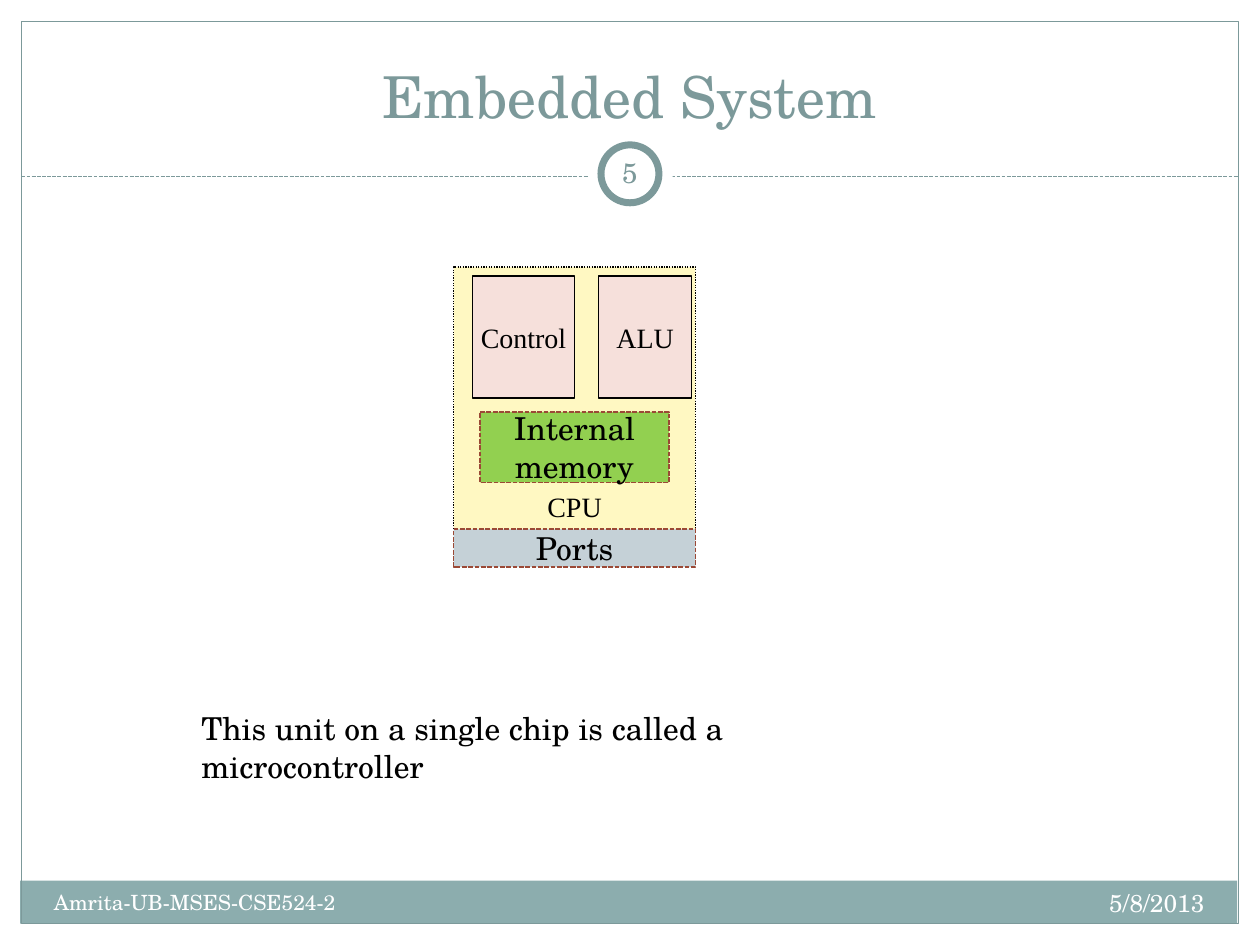
from pptx import Presentation
from pptx.dml.color import RGBColor
from pptx.enum.dml import MSO_LINE
from pptx.enum.shapes import MSO_CONNECTOR, MSO_SHAPE
from pptx.enum.text import MSO_ANCHOR, PP_ALIGN
from pptx.oxml.ns import qn
from pptx.util import Inches, Pt
from lxml import etree

RECT, OVAL = MSO_SHAPE.RECTANGLE, MSO_SHAPE.OVAL
DOT, DASH = MSO_LINE.ROUND_DOT, MSO_LINE.SQUARE_DOT
LEFT, CENTER, RIGHT = PP_ALIGN.LEFT, PP_ALIGN.CENTER, PP_ALIGN.RIGHT
TOP, MIDDLE, BOTTOM = MSO_ANCHOR.TOP, MSO_ANCHOR.MIDDLE, MSO_ANCHOR.BOTTOM
SERIF, TIMES = "TeX Gyre Schola", "Times New Roman"
TEAL, BAND, WHITE, BLACK, RUST = "7C999A", "8CADAE", "FFFFFF", "000000", "9B4936"


def rgb(value):
    return RGBColor.from_string(value)


def write(holder, text, size, font=SERIF, color=BLACK, align=CENTER,
          anchor=MIDDLE, wrap=True, inset=None):
    frame = holder.text_frame
    frame.text = text
    settings = {"word_wrap": wrap, "vertical_anchor": anchor}
    if inset is not None:
        for side in ("left", "top", "right", "bottom"):
            settings[f"margin_{side}"] = Inches(inset)
    for name, value in settings.items():
        setattr(frame, name, value)
    paragraph = frame.paragraphs[0]
    paragraph.alignment = align
    for name, value in {"size": Pt(size), "name": font, "bold": False}.items():
        setattr(paragraph.runs[0].font, name, value)
    paragraph.runs[0].font.color.rgb = rgb(color)


prs = Presentation()
prs.slide_width, prs.slide_height = Inches(10), Inches(7.5)
slide = prs.slides.add_slide(prs.slide_layouts[5])
shapes = slide.shapes

# Title
title = shapes.title
for name, value in {"left": 0.33, "top": 0.25, "width": 9.33, "height": 0.83}.items():
    setattr(title, name, Inches(value))
write(title, "Embedded System", 33, color=TEAL, anchor=BOTTOM)

# Dashed rule under the title
rule = shapes.add_connector(MSO_CONNECTOR.STRAIGHT, Inches(0.17), Inches(1.4),
                            Inches(9.83), Inches(1.4))
rule.line.color.rgb = rgb(TEAL)
rule.line.width = Pt(0.75)
rule.line.dash_style = DASH
etree.SubElement(rule._element.spPr, qn("a:effectLst"))

# Footer band, frame, number badge and chip blocks:
# preset, box, fill, line (colour, width, dash), label
blocks = [
    (RECT, (0.16, 6.99, 9.66, 0.34), BAND, None, None),
    (RECT, (0.17, 0.17, 9.66, 7.16), None, (TEAL, 0.75, None), None),
    (OVAL, (4.67, 1.05, 0.67, 0.67), WHITE, None, None),
    (OVAL, (4.77, 1.15, 0.46, 0.46), WHITE, (TEAL, 4, None), None),
    (RECT, (3.6, 2.12, 1.92, 2.08), "FFF8C2", (BLACK, 0.75, DOT),
     {"text": "CPU", "size": 16, "font": TIMES, "anchor": BOTTOM, "wrap": False}),
    (RECT, (3.75, 2.19, 0.81, 0.97), "F6E0DB", (BLACK, 0.75, None),
     {"text": "Control", "size": 16, "font": TIMES, "wrap": False}),
    (RECT, (4.75, 2.19, 0.74, 0.97), "F6E0DB", (BLACK, 0.75, None),
     {"text": "ALU", "size": 16, "font": TIMES, "wrap": False}),
    (RECT, (3.81, 3.27, 1.5, 0.56), "92D050", (RUST, 0.9, DASH),
     {"text": "Internal memory", "size": 18}),
    (RECT, (3.6, 4.2, 1.92, 0.3), "C5D1D7", (RUST, 0.9, DASH),
     {"text": "Ports", "size": 18}),
]
for preset, box, fill, outline, label in blocks:
    block = shapes.add_shape(preset, *map(Inches, box))
    block.shadow.inherit = False
    if fill:
        block.fill.solid()
        block.fill.fore_color.rgb = rgb(fill)
    else:
        block.fill.background()
    if outline:
        color, width, dash = outline
        block.line.color.rgb = rgb(color)
        block.line.width = Pt(width)
        if dash:
            block.line.dash_style = dash
    else:
        block.line.fill.background()
    if label:
        write(block, **label)

# Date, footer, slide number and caption
captions = [
    ((6.33, 7, 3.33, 0.4),
     {"text": "5/8/2013", "size": 14, "color": WHITE, "align": RIGHT, "anchor": TOP}),
    ((0.33, 7.01, 3.92, 0.4),
     {"text": "Amrita-UB-MSES-CSE524-2", "size": 12, "color": WHITE,
      "align": LEFT, "anchor": TOP}),
    ((4.75, 1.13, 0.5, 0.48),
     {"text": "5", "size": 16, "color": TEAL, "inset": 0.05}),
    ((1.5, 5.58, 5.95, 0.4),
     {"text": "This unit on a single chip is called a microcontroller",
      "size": 18, "align": LEFT, "anchor": TOP}),
]
for box, label in captions:
    write(shapes.add_textbox(*map(Inches, box)), **label)

prs.save("out.pptx")
